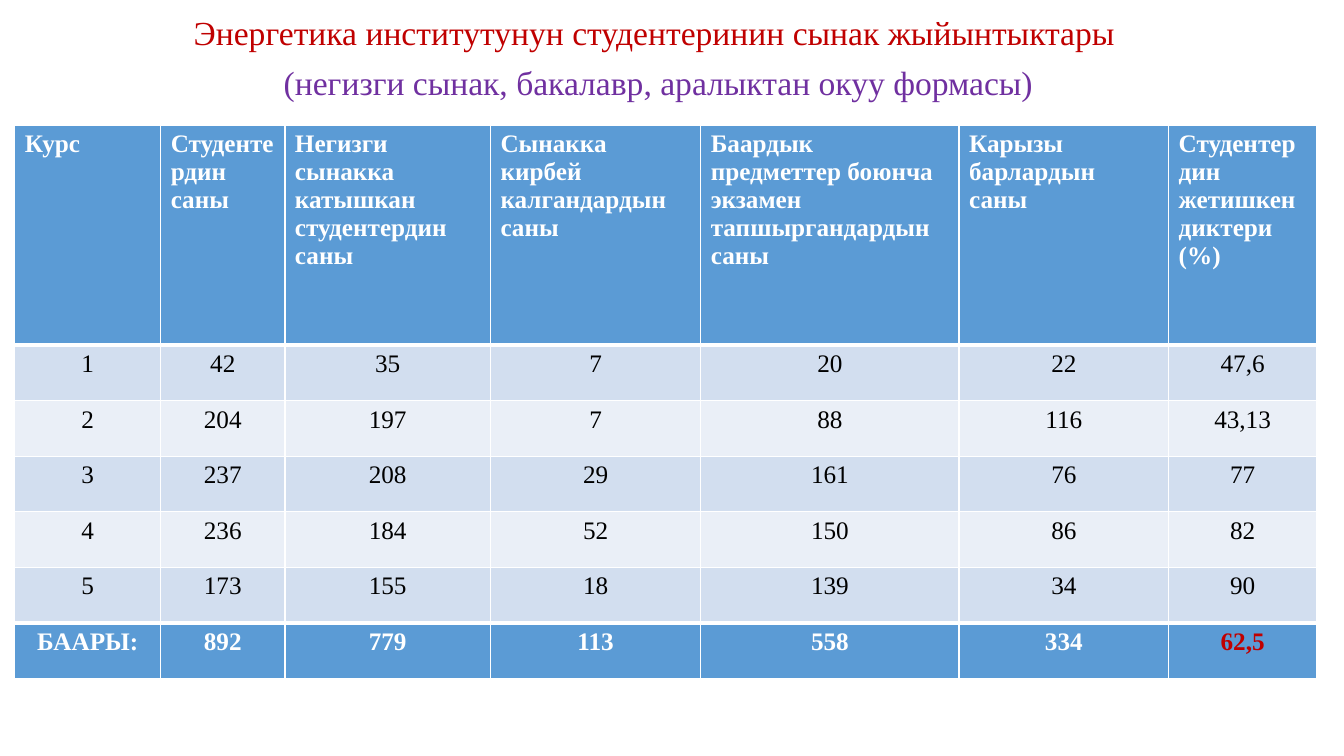
"""Build a slide with the exam results of the students by year of study."""
from lxml import etree
from pptx import Presentation
from pptx.dml.color import RGBColor
from pptx.enum.text import MSO_ANCHOR, MSO_AUTO_SIZE, PP_ALIGN
from pptx.oxml.ns import qn
from pptx.util import Cm, Pt

LEFT, CENTER = PP_ALIGN.LEFT, PP_ALIGN.CENTER
TOP = MSO_ANCHOR.TOP
NO_FIT = MSO_AUTO_SIZE.NONE
FONT = "Times New Roman"
WHITE, BLACK, RED, PURPLE = "FFFFFF", "000000", "C00000", "7030A0"
BLUE, BAND_DARK, BAND_LIGHT = "5B9BD5", "D2DEEF", "EAEFF7"

HEADLINE = [
    ("Энергетика институтунун студентеринин сынак жыйынтыктары ", RED),
    ("(негизги сынак, бакалавр, аралыктан окуу формасы)", PURPLE),
]
RESULTS = [
    ["Курс", "Студентердин саны", "Негизги сынакка катышкан студентердин саны",
     "Сынакка кирбей калгандардын саны",
     "Баардык предметтер боюнча экзамен тапшыргандардын саны",
     "Карызы барлардын саны", "Студентердин жетишкендиктери (%)"],
    ["1", "42", "35", "7", "20", "22", "47,6"],
    ["2", "204", "197", "7", "88", "116", "43,13"],
    ["3", "237", "208", "29", "161", "76", "77"],
    ["4", "236", "184", "52", "150", "86", "82"],
    ["5", "173", "155", "18", "139", "34", "90"],
    ["БААРЫ:", "892", "779", "113", "558", "334", "62,5"],
]
COLUMN_WIDTHS = [3.68, 3.13, 5.18, 5.3, 6.51, 5.28, 3.73]
HEADER_HEIGHT, ROW_HEIGHT = 5.54, 1.4
TOTAL = len(RESULTS) - 1


def add_run(paragraph, text, size, color, bold=False):
    run = paragraph.add_run()
    run.text = text
    run.font.name = FONT
    run.font.size = Pt(size)
    run.font.bold = bold
    run.font.color.rgb = RGBColor.from_string(color)


def add_border(cell, side, points):
    line = etree.SubElement(cell._tc.get_or_add_tcPr(), qn("a:ln" + side), w=str(Pt(points)))
    fill = etree.SubElement(line, qn("a:solidFill"))
    etree.SubElement(fill, qn("a:srgbClr"), val=WHITE)


prs = Presentation()
prs.slide_width, prs.slide_height = Cm(33.87), Cm(19.05)
slide = prs.slides.add_slide(prs.slide_layouts[5])

title = slide.shapes.title
title.left, title.top, title.width, title.height = Cm(1.09), Cm(0.28), Cm(31.01), Cm(2.87)
heading = title.text_frame
heading.word_wrap = True
heading.auto_size = NO_FIT
heading.vertical_anchor = TOP
for index, (text, color) in enumerate(HEADLINE):
    paragraph = heading.add_paragraph() if index else heading.paragraphs[0]
    paragraph.alignment = CENTER
    paragraph.line_spacing = 0.9
    paragraph.space_before = Pt(10)
    add_run(paragraph, text, 24, color)

results_table = slide.shapes.add_table(
    len(RESULTS), len(COLUMN_WIDTHS), Cm(0.37), Cm(3.16),
    Cm(sum(COLUMN_WIDTHS)), Cm(HEADER_HEIGHT + TOTAL * ROW_HEIGHT)).table
for column, width in zip(results_table.columns, COLUMN_WIDTHS):
    column.width = Cm(width)

for r, values in enumerate(RESULTS):
    results_table.rows[r].height = Cm(ROW_HEIGHT if r else HEADER_HEIGHT)
    emphasized = r in (0, TOTAL)
    band = BAND_DARK if r % 2 else BAND_LIGHT
    borders = {"L": 1, "R": 1, "T": 3 if r in (1, TOTAL) else 1,
               "B": 3 if r in (0, TOTAL - 1) else 1}
    for c, value in enumerate(values):
        cell = results_table.cell(r, c)
        for side, points in borders.items():
            add_border(cell, side, points)
        cell.fill.solid()
        cell.fill.fore_color.rgb = RGBColor.from_string(BLUE if emphasized else band)
        color = WHITE if emphasized else BLACK
        if r == TOTAL and c == len(values) - 1:
            color = RED
        paragraph = cell.text_frame.paragraphs[0]
        paragraph.alignment = CENTER if r else LEFT
        add_run(paragraph, value, 18, color, emphasized)

prs.save("out.pptx")
